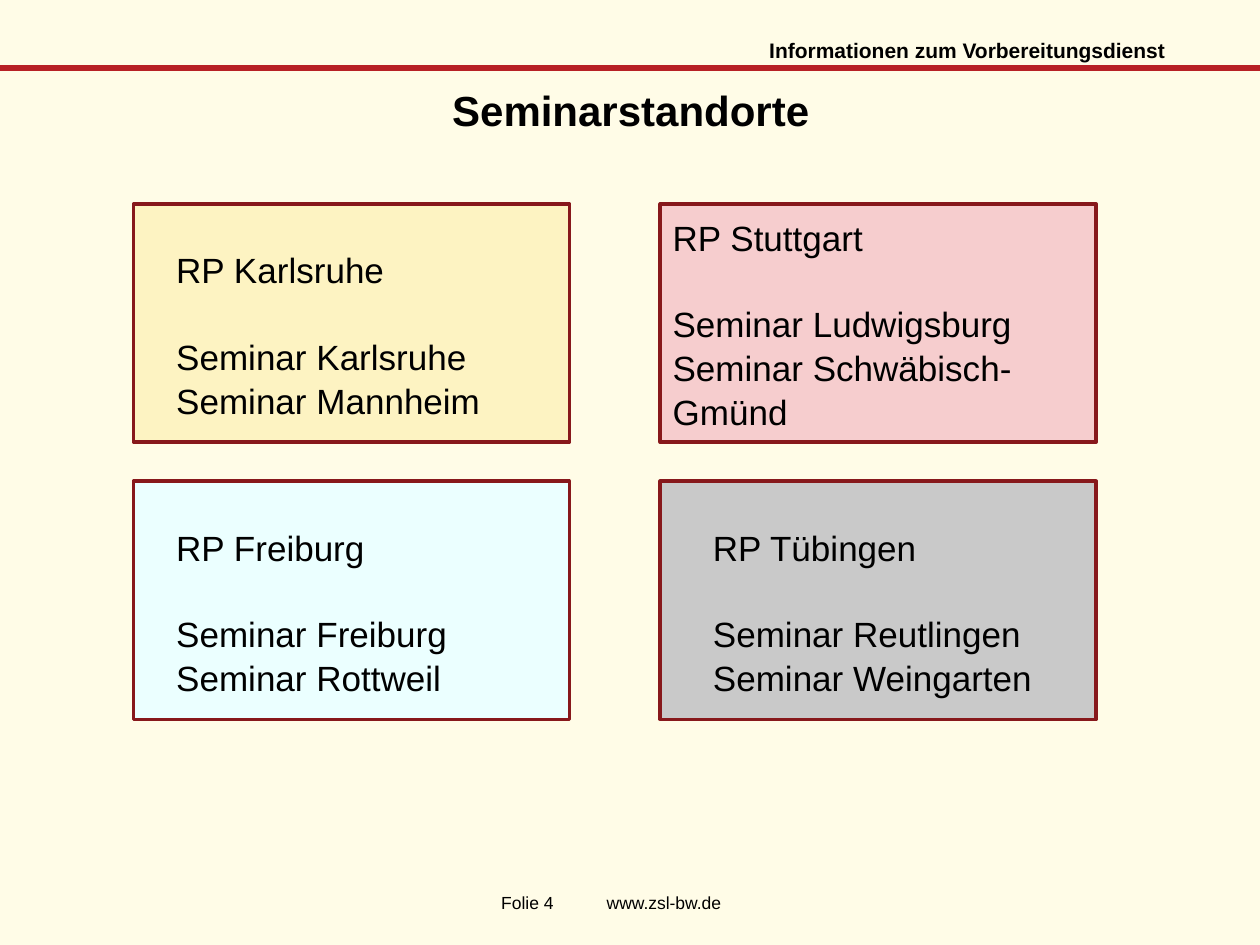
"""Build the slide that lists the seminar locations by region."""
from dataclasses import dataclass

from lxml import etree
from pptx import Presentation
from pptx.dml.color import RGBColor
from pptx.enum import shapes, text
from pptx.oxml import ns
from pptx.util import Pt


@dataclass(frozen=True)
class Theme:
    font: str = "Arial"
    back: str = "FFFCE7"
    ink: str = "000000"
    bar: str = "B72025"
    edge: str = "87181B"
    title: float = 24
    body: float = 20
    head: float = 12
    foot: float = 10


@dataclass(frozen=True)
class Box:
    left: float
    top: float
    width: float
    height: float


@dataclass(frozen=True)
class Region:
    name: str
    sites: tuple[str, ...]
    fill: str
    col: int
    row: int
    inset: float | None


THEME = Theme()
LEFT, TOP = 76.3, 116.6
WIDE, HIGH = 249.1, 136.1
STEP_X, STEP_Y = 301, 158.4
PAD_Y = 20.9
NOTE_W, NOTE_H = 243.4, 104.4
LEAD = 1.05
GAP = 24
TAB = 60.3

REGIONS = (
    Region("RP Karlsruhe", ("Seminar Karlsruhe", "Seminar Mannheim"),
           "FDF3C2", 0, 0, 17.3),
    Region("RP Stuttgart", ("Seminar Ludwigsburg", "Seminar Schwäbisch-Gmünd"),
           "F6CDCE", 1, 0, None),
    Region("RP Tübingen", ("Seminar Reutlingen", "Seminar Weingarten"),
           "C9C9C9", 1, 1, 23),
    Region("RP Freiburg", ("Seminar Freiburg", "Seminar Rottweil"),
           "EBFFFF", 0, 1, 17.3),
)


def style(para, size: float, bold: bool = False, align=text.PP_ALIGN.LEFT) -> None:
    """Format one paragraph and its runs."""
    para.alignment = align
    for run in para.runs:
        font = run.font
        font.name, font.size, font.bold = THEME.font, Pt(size), bold
        font.color.rgb = RGBColor.from_string(THEME.ink)


def add_rect(slide, box: Box, fill: str, line: str, width: float):
    """Draw a filled and outlined rectangle."""
    rect = slide.shapes.add_shape(
        shapes.MSO_SHAPE.RECTANGLE,
        Pt(box.left), Pt(box.top), Pt(box.width), Pt(box.height))
    rect.shadow.inherit = False
    rect.fill.solid()
    rect.fill.fore_color.rgb = RGBColor.from_string(fill)
    rect.line.color.rgb = RGBColor.from_string(line)
    rect.line.width = Pt(width)
    return rect


def add_text(slide, box: Box, wrap: bool = True, tight: bool = False):
    """Add a text box and return its frame."""
    frame = slide.shapes.add_textbox(
        Pt(box.left), Pt(box.top), Pt(box.width), Pt(box.height)).text_frame
    frame.word_wrap = wrap
    if tight:
        frame.margin_left = frame.margin_right = 0
        frame.margin_top = frame.margin_bottom = 0
    return frame


def add_line(slide, box: Box, words: str, size: float, bold: bool = False,
             align=text.PP_ALIGN.LEFT, tight: bool = False) -> None:
    """Add a text box with one paragraph."""
    frame = add_text(slide, box, tight=tight)
    frame.text = words
    style(frame.paragraphs[0], size, bold, align)


def add_foot(slide) -> None:
    """Add the slide number and web address, parted by a tab."""
    frame = add_text(slide, Box(286.4, 509.8, 142.6, 12.2), wrap=False, tight=True)
    frame.text = "Folie 4\twww.zsl-bw.de"
    para = frame.paragraphs[0]
    style(para, THEME.foot)
    tabs = etree.SubElement(para._p.get_or_add_pPr(), ns.qn("a:tabLst"))
    etree.SubElement(tabs, ns.qn("a:tab"), pos=str(Pt(TAB)), algn="l")


def add_region(slide, region: Region) -> None:
    """Draw a region's panel with its name and seminars."""
    left, top = LEFT + region.col * STEP_X, TOP + region.row * STEP_Y
    rect = add_rect(slide, Box(left, top, WIDE, HIGH), region.fill, THEME.edge, 2)
    if region.inset is None:
        frame = rect.text_frame
        frame.word_wrap = True
        frame.vertical_anchor = text.MSO_ANCHOR.MIDDLE
    else:
        frame = add_text(slide, Box(left + region.inset, top + PAD_Y, NOTE_W, NOTE_H))
    frame.text = "\n".join((region.name, *region.sites))
    for para in frame.paragraphs:
        style(para, THEME.body)
        para.line_spacing = LEAD
    frame.paragraphs[1].space_before = Pt(GAP)


def main() -> None:
    """Build and save the slide."""
    deck = Presentation()
    deck.slide_width, deck.slide_height = Pt(720), Pt(540)
    slide = deck.slides.add_slide(deck.slide_layouts[6])
    slide.background.fill.solid()
    slide.background.fill.fore_color.rgb = RGBColor.from_string(THEME.back)
    add_rect(slide, Box(0, 37.4, 720, 2.9), THEME.bar, THEME.bar, 0.75)
    add_foot(slide)
    add_line(slide, Box(5.8, 44.6, 709.2, 36), "Seminarstandorte",
             THEME.title, True, text.PP_ALIGN.CENTER)
    for region in REGIONS:
        add_region(slide, region)
    add_line(slide, Box(190.1, 21.6, 475.9, 14.4), "Informationen zum Vorbereitungsdienst",
             THEME.head, True, text.PP_ALIGN.RIGHT, tight=True)
    deck.save("out.pptx")


if __name__ == "__main__":
    main()
